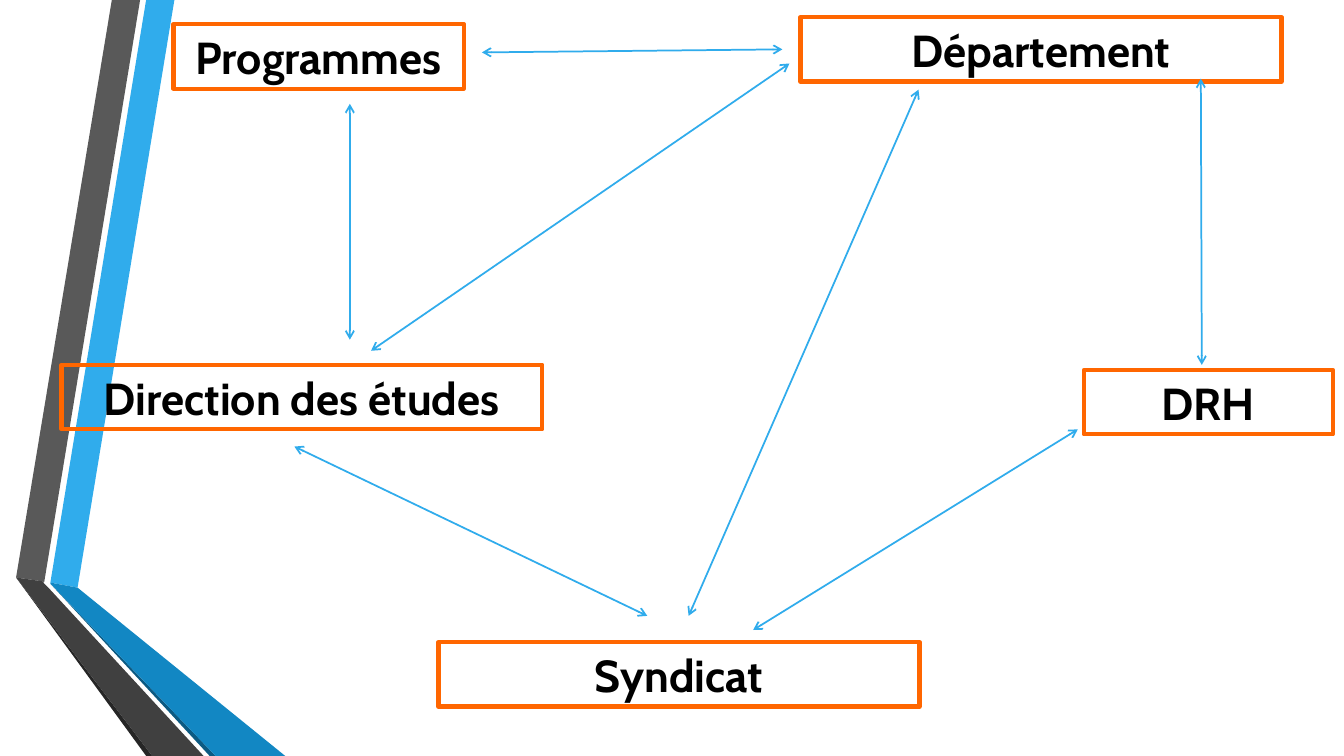
from typing import NamedTuple

from lxml import etree
from pptx import Presentation
from pptx.dml.color import RGBColor
from pptx.enum.shapes import MSO_CONNECTOR, MSO_SHAPE
from pptx.enum.text import MSO_ANCHOR, MSO_AUTO_SIZE, PP_ALIGN
from pptx.oxml.ns import qn
from pptx.shapes.autoshape import Shape
from pptx.shapes.shapetree import SlideShapes
from pptx.util import Emu, Pt

RECTANGLE = MSO_SHAPE.RECTANGLE
STRAIGHT = MSO_CONNECTOR.STRAIGHT
CENTER = PP_ALIGN.CENTER
MIDDLE = MSO_ANCHOR.MIDDLE
FIT_SHAPE = MSO_AUTO_SIZE.SHAPE_TO_FIT_TEXT

EMU_PER_PX = 9144
SLIDE_WIDTH, SLIDE_HEIGHT = 1333, 750
BOX_HEIGHT = 64
ORANGE = "FF6600"
BLUE = "30ACEC"
BLACK = "000000"


class Ribbon(NamedTuple):
    color: str
    points: list[tuple[int, int]]


class Service(NamedTuple):
    label: str
    left: int
    top: int
    width: int = 477


class Exchange(NamedTuple):
    start: tuple[int, int]
    end: tuple[int, int]


RIBBONS = [
    Ribbon(BLUE, [(50, 578), (77, 583), (173, 0), (145, 0)]),
    Ribbon("595959", [(139, 0), (111, 0), (16, 573), (44, 577)]),
    Ribbon("262626", [(16, 573), (145, 750), (151, 750)]),
    Ribbon("0C5A82", [(50, 579), (208, 750), (214, 750)]),
    Ribbon("1287C3", [(50, 579), (214, 750), (283, 750), (77, 583), (50, 578)]),
    Ribbon("404040", [(202, 750), (48, 583), (43, 578), (44, 577), (16, 573), (151, 750)]),
]

SERVICES = [
    Service("Département", 794, 17),
    Service("DRH", 1075, 367, 247),
    Service("Direction des études", 61, 362),
    Service("Syndicat", 435, 637),
    Service("Programmes", 172, 24, 288),
]

EXCHANGES = [
    Exchange((911, 89), (683, 611)),
    Exchange((783, 63), (368, 348)),
    Exchange((292, 443), (642, 611)),
    Exchange((1192, 362), (1191, 78)),
    Exchange((747, 625), (1069, 426)),
    Exchange((776, 49), (478, 52)),
    Exchange((347, 337), (347, 103)),
]


def px(length: int) -> Emu:
    return Emu(length * EMU_PER_PX)


def rgb(color: str) -> RGBColor:
    return RGBColor.from_string(color)


def write_text(box: Shape, text: str, *, font: str, size: int, color: str, bold: bool) -> None:
    frame = box.text_frame
    frame.word_wrap = True
    frame.auto_size = FIT_SHAPE
    frame.vertical_anchor = MIDDLE
    paragraph = frame.paragraphs[0]
    paragraph.alignment = CENTER
    run = paragraph.add_run()
    run.text = text
    run.font.name = font
    run.font.size = Pt(size)
    run.font.bold = bold
    run.font.color.rgb = rgb(color)


def draw_ribbon(shapes: SlideShapes, ribbon: Ribbon) -> None:
    first, *others = ribbon.points
    outline = shapes.build_freeform(*first, scale=EMU_PER_PX)
    outline.add_line_segments(others, close=True)
    band = outline.convert_to_shape()
    band.shadow.inherit = False
    band.fill.solid()
    band.fill.fore_color.rgb = rgb(ribbon.color)
    band.line.fill.background()


def draw_service(shapes: SlideShapes, service: Service) -> None:
    box = shapes.add_shape(
        RECTANGLE, px(service.left), px(service.top), px(service.width), px(BOX_HEIGHT)
    )
    box.shadow.inherit = False
    box.fill.background()
    box.line.color.rgb = rgb(ORANGE)
    box.line.width = Pt(3)
    write_text(box, service.label, font="Cabin", size=32, color=BLACK, bold=True)


def draw_exchange(shapes: SlideShapes, exchange: Exchange) -> None:
    ends = [px(value) for value in (*exchange.start, *exchange.end)]
    arrow = shapes.add_connector(STRAIGHT, *ends)
    arrow.line.color.rgb = rgb(BLUE)
    arrow.line.width = Pt(1.25)
    properties = arrow._element.spPr
    outline = properties.find(qn("a:ln"))
    for tip in ("a:headEnd", "a:tailEnd"):
        etree.SubElement(outline, qn(tip), type="arrow")
    etree.SubElement(properties, qn("a:effectLst"))


def main() -> None:
    presentation = Presentation()
    presentation.slide_width = px(SLIDE_WIDTH)
    presentation.slide_height = px(SLIDE_HEIGHT)
    blank_layout = presentation.slide_layouts[6]
    shapes = presentation.slides.add_slide(blank_layout).shapes
    for ribbon in RIBBONS:
        draw_ribbon(shapes, ribbon)
    for service in SERVICES:
        draw_service(shapes, service)
    for exchange in EXCHANGES:
        draw_exchange(shapes, exchange)
    presentation.save("out.pptx")


if __name__ == "__main__":
    main()
